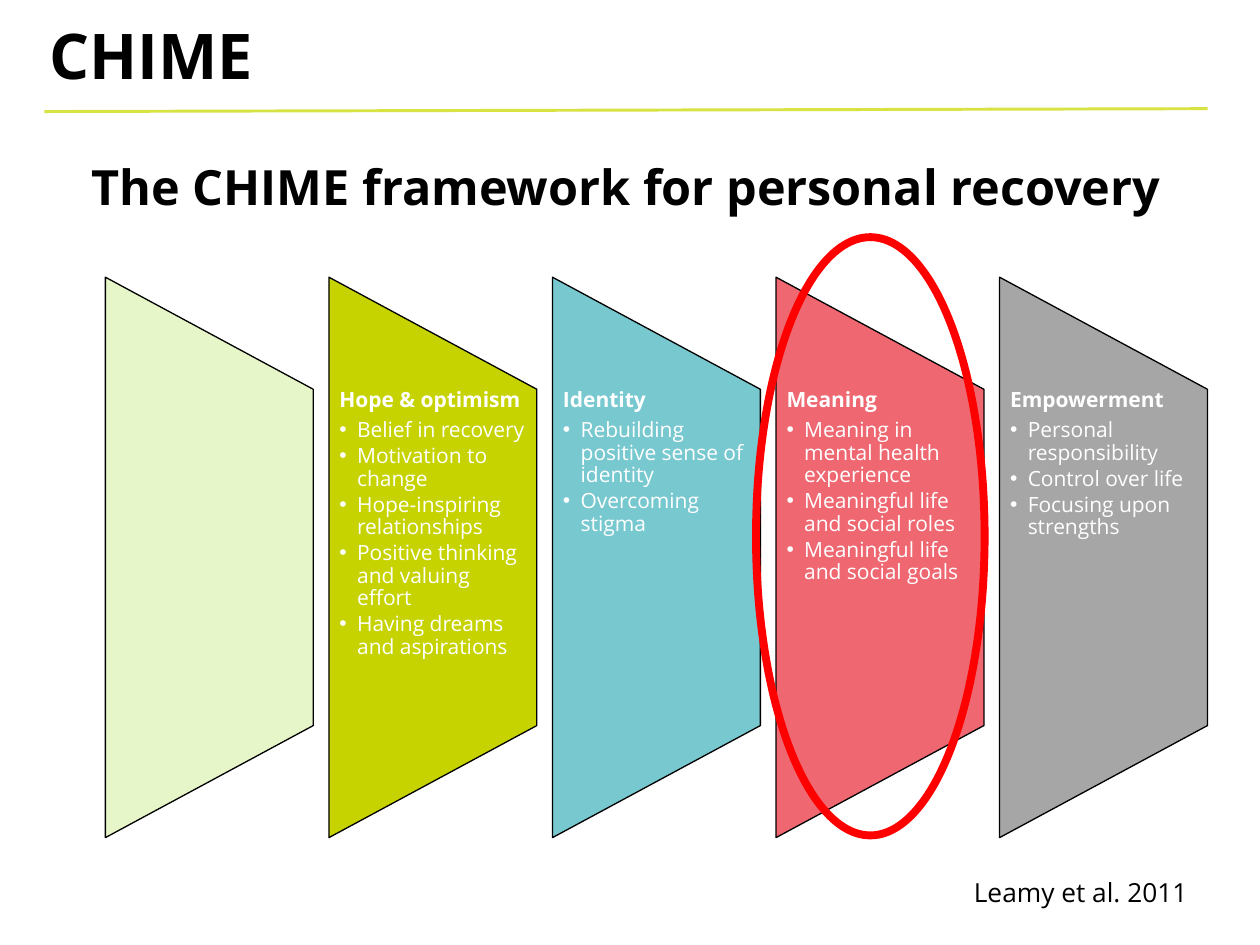
from dataclasses import dataclass, field

from pptx import Presentation
from pptx.dml import color
from pptx.enum import shapes, text
from pptx.oxml import ns, xmlchemy
from pptx.util import Pt

FONT, BULLET_FONT = "Open Sans", "Arial"
BLACK, WHITE = "000000", "FFFFFF"
PANEL_LEFT, PANEL_PITCH = 80.3, 170.33
PANEL_WIDTH, PANEL_HEIGHT, PANEL_MIDDLE = 158.4, 427, 424.7
LIST_TOP, LIST_HEIGHT = 296.6, 256.3
BULLET_INDENT = 13.5


@dataclass
class Panel:
    fill: str
    heading: str = ""
    points: list[str] = field(default_factory=list)


PANELS = [
    Panel("E7F6C8"),
    Panel("C6D301", "Hope & optimism", [
        "Belief in recovery", "Motivation to change",
        "Hope-inspiring relationships",
        "Positive thinking and valuing effort",
        "Having dreams and aspirations"]),
    Panel("78C8D0", "Identity", [
        "Rebuilding positive sense of identity", "Overcoming stigma"]),
    Panel("EE6771", "Meaning", [
        "Meaning in mental health experience",
        "Meaningful life and social roles",
        "Meaningful life and social goals"]),
    Panel("A6A6A6", "Empowerment", [
        "Personal responsibility", "Control over life",
        "Focusing upon strengths"]),
]


def rgb(value: str) -> color.RGBColor:
    return color.RGBColor.from_string(value)


def add_box(slide, left: float, top: float, width: float, height: float,
            inset_x: float = 9.4, inset_y: float = 5,
            anchor=text.MSO_ANCHOR.TOP):
    """Add an empty wrapping text box and return its text frame."""
    frame = slide.shapes.add_textbox(
        Pt(left), Pt(top), Pt(width), Pt(height)).text_frame
    frame.word_wrap = True
    frame.vertical_anchor = anchor
    frame.margin_left = frame.margin_right = Pt(inset_x)
    frame.margin_top = frame.margin_bottom = Pt(inset_y)
    return frame


def write(paragraph, words: str, *, size: float, fill: str = BLACK,
          bold: bool = False, align=text.PP_ALIGN.LEFT,
          spacing: float = 1.0, after: float = 0,
          bullet: bool = False) -> None:
    """Fill one paragraph with formatted text."""
    paragraph.alignment = align
    paragraph.line_spacing = spacing
    paragraph.space_after = Pt(after)
    run = paragraph.add_run()
    run.text = words
    run.font.name = FONT
    run.font.size = Pt(size)
    run.font.bold = bold
    run.font.color.rgb = rgb(fill)
    if bullet:
        paragraph.level = 1
        properties = paragraph._p.get_or_add_pPr()
        properties.set("marL", str(Pt(BULLET_INDENT)))
        properties.set("indent", str(-Pt(BULLET_INDENT)))
        for tag, name, value in (("a:buFont", "typeface", BULLET_FONT),
                                 ("a:buChar", "char", "•")):
            mark = xmlchemy.OxmlElement(tag)
            mark.set(name, value)
            properties.append(mark)


def add_outlined(slide, kind, left: float, top: float, width: float,
                 height: float, line: str, weight: float,
                 fill: str | None = None):
    """Add a preset shape; without a fill it is see-through."""
    shape = slide.shapes.add_shape(
        kind, Pt(left), Pt(top), Pt(width), Pt(height))
    shape.shadow.inherit = False
    if fill:
        shape.fill.solid()
        shape.fill.fore_color.rgb = rgb(fill)
    else:
        shape.fill.background()
    shape.line.color.rgb = rgb(line)
    shape.line.width = Pt(weight)
    return shape


def add_panel(slide, panel: Panel, left: float) -> None:
    # The trapezoid lies on its side, so its length runs down the slide
    trapezoid = add_outlined(
        slide, shapes.MSO_SHAPE.FLOWCHART_MANUAL_OPERATION,
        left + (PANEL_WIDTH - PANEL_HEIGHT) / 2,
        PANEL_MIDDLE - PANEL_WIDTH / 2,
        PANEL_HEIGHT, PANEL_WIDTH, BLACK, 1, panel.fill)
    trapezoid.rotation = 270
    if not panel.heading:
        return

    frame = add_box(slide, left, LIST_TOP, PANEL_WIDTH, LIST_HEIGHT,
                    inset_x=8, inset_y=0)
    write(frame.paragraphs[0], panel.heading, size=16, fill=WHITE,
          bold=True, spacing=0.9, after=5.7)
    for point in panel.points:
        write(frame.add_paragraph(), point, size=16, fill=WHITE,
              spacing=0.9, after=2.5, bullet=True)


def add_rule(slide, start: tuple[float, float], end: tuple[float, float],
             line: str, weight: float) -> None:
    rule = slide.shapes.add_connector(
        shapes.MSO_CONNECTOR.STRAIGHT, *map(Pt, start + end))
    rule.line.color.rgb = rgb(line)
    rule.line.width = Pt(weight)
    properties = rule._element.find(ns.qn("p:spPr"))
    properties.append(xmlchemy.OxmlElement("a:effectLst"))


def main() -> None:
    presentation = Presentation()
    presentation.slide_width, presentation.slide_height = Pt(960), Pt(720)
    slide = presentation.slides.add_slide(presentation.slide_layouts[6])

    # Framework heading
    heading = add_box(slide, 33.8, 114.5, 886.3, 65.5)
    write(heading.paragraphs[0], "The CHIME framework for personal recovery",
          size=37, bold=True, align=text.PP_ALIGN.CENTER)

    # Five panels
    for index, panel in enumerate(PANELS):
        add_panel(slide, panel, PANEL_LEFT + index * PANEL_PITCH)

    # Citation
    citation = add_box(slide, 732.6, 662.4, 187.2, 33.8)
    write(citation.paragraphs[0], "Leamy et al. 2011", size=20)

    # Slide title and rule
    title = add_box(slide, 28.2, 9.5, 886.3, 64, anchor=text.MSO_ANCHOR.MIDDLE)
    write(title.paragraphs[0], "CHIME", size=48, bold=True)
    add_rule(slide, (33.8, 85), (920.2, 82.8), "D6E342", 2.25)

    # Ring around Meaning
    add_outlined(slide, shapes.MSO_SHAPE.OVAL, 576, 180.7, 174.2, 455.8,
                 "FF0000", 6)

    presentation.save("out.pptx")


if __name__ == "__main__":
    main()
